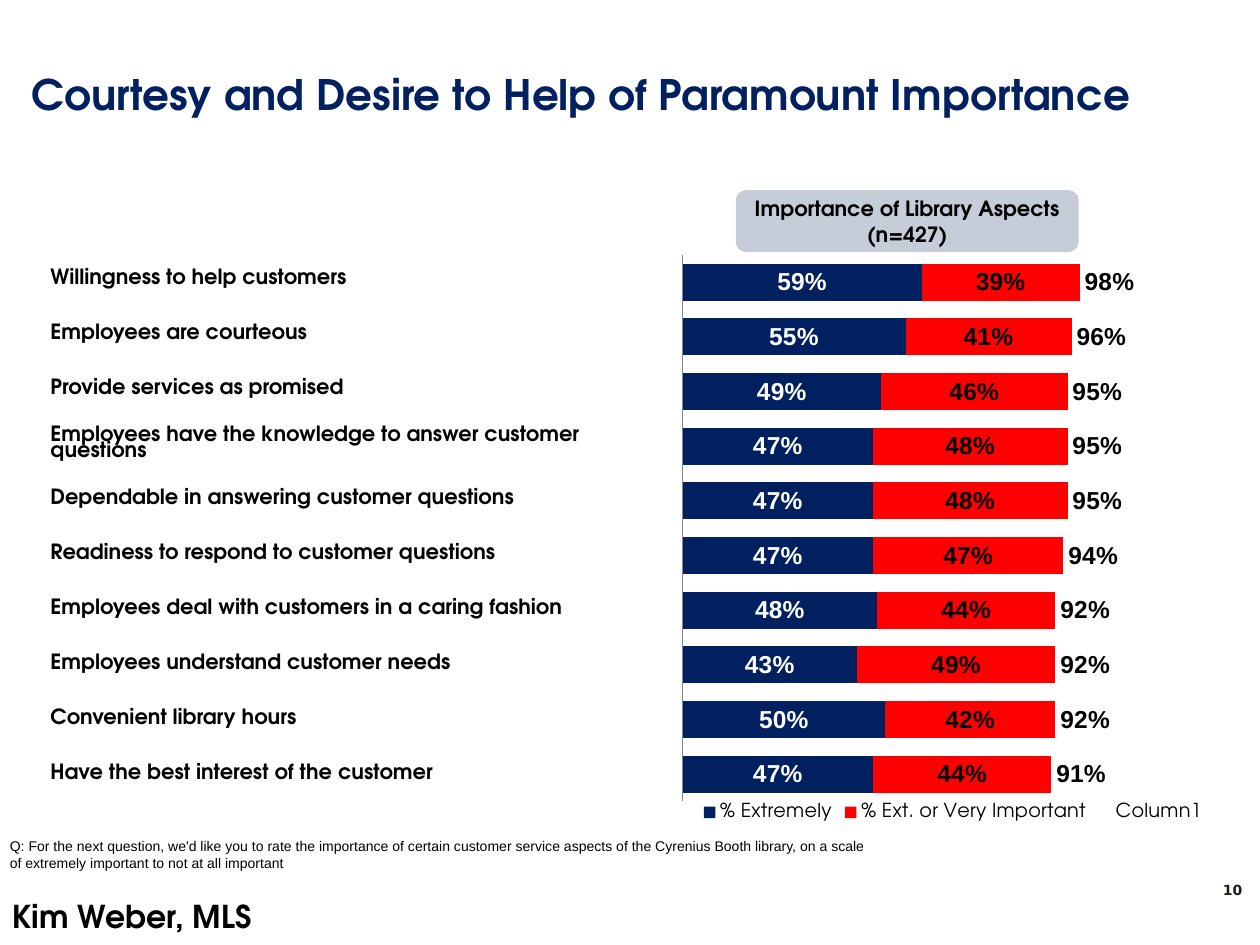
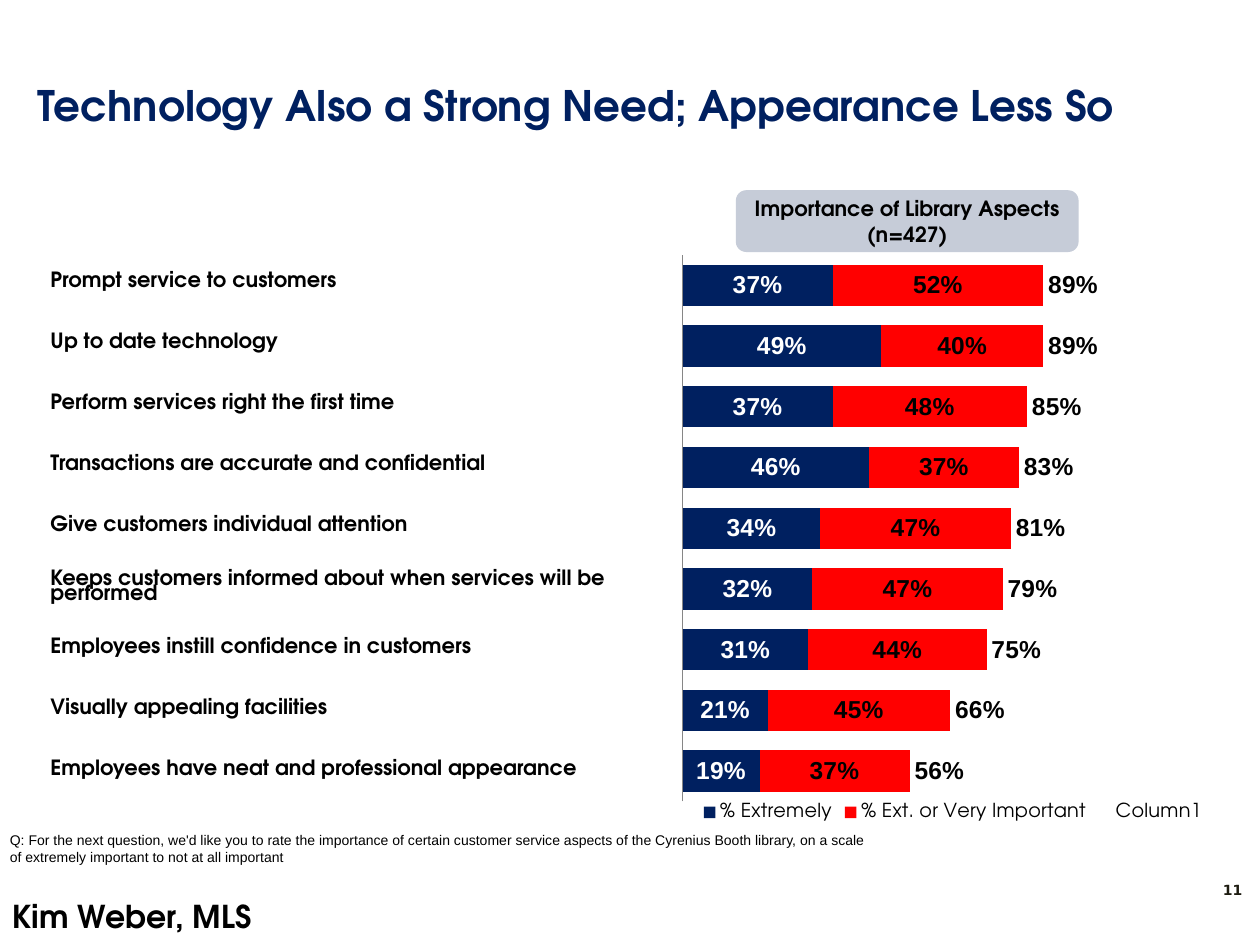
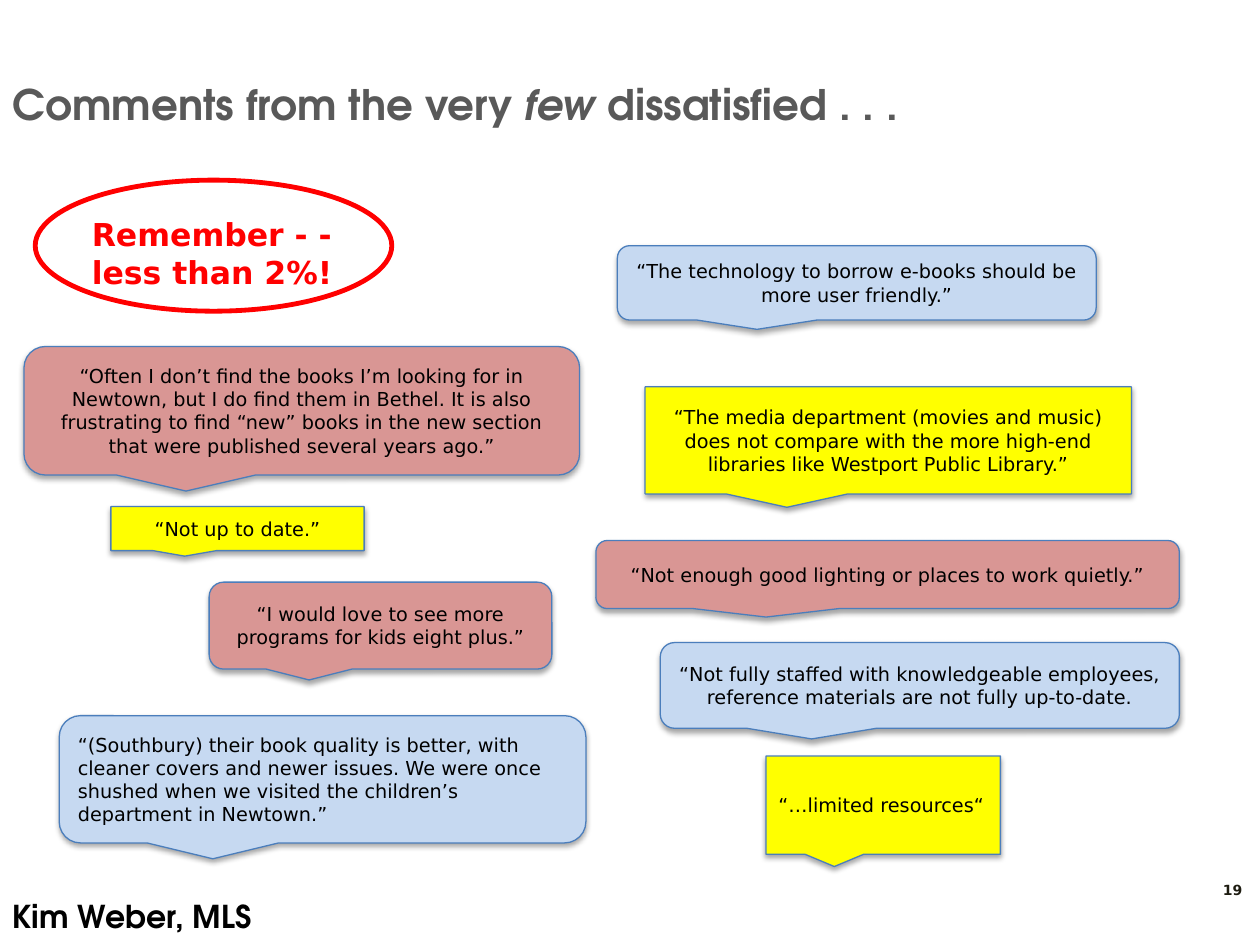
"""Build three library survey slides: two importance charts and a page of comments."""
from lxml import etree
from pptx import Presentation
from pptx.chart.data import CategoryChartData
from pptx.dml.color import RGBColor
from pptx.enum.chart import XL_CHART_TYPE as ChartType
from pptx.enum.chart import XL_LABEL_POSITION as LabelPos
from pptx.enum.chart import XL_LEGEND_POSITION as LegendPos
from pptx.enum.chart import XL_TICK_LABEL_POSITION as TickLabelPos
from pptx.enum.chart import XL_TICK_MARK as TickMark
from pptx.enum.shapes import MSO_SHAPE as Shape
from pptx.enum.text import MSO_ANCHOR as Anchor
from pptx.enum.text import MSO_AUTO_SIZE as AutoSize
from pptx.enum.text import PP_ALIGN as Align
from pptx.oxml import parse_xml
from pptx.oxml.ns import nsdecls, qn
from pptx.util import Inches, Pt

NAVY = RGBColor(0x00, 0x20, 0x60)
RED = RGBColor(0xFF, 0x00, 0x00)
BLACK = RGBColor(0x00, 0x00, 0x00)
WHITE = RGBColor(0xFF, 0xFF, 0xFF)
GRAY = RGBColor(0x59, 0x59, 0x59)
AXIS_GRAY = RGBColor(0x86, 0x86, 0x86)
PAGE_INK = RGBColor(0x1E, 0x1C, 0x11)
BANNER = RGBColor(0xC6, 0xCC, 0xD8)
YELLOW = RGBColor(0xFF, 0xFF, 0x00)
ROSE = RGBColor(0xD9, 0x96, 0x94)
SKY = RGBColor(0xC6, 0xD9, 0xF1)
OUTLINE = RGBColor(0x4B, 0x7E, 0xBC)

HEADING_FONT = "TeX Gyre Adventor"
BODY_FONT = "DejaVu Sans"
CHART_FONT = "Arial"

AUTHOR = "Kim Weber, MLS"
QUESTION = ("Q: For the next question, we'd like you to rate the importance of certain "
            "customer service aspects of the Cyrenius Booth library, on a scale of "
            "extremely important to not at all important")
SHADOW = (f'<a:effectLst {nsdecls("a")}><a:outerShdw blurRad="39370" dist="22860" '
          'dir="5400000" rotWithShape="0"><a:srgbClr val="000000">'
          '<a:alpha val="35000"/></a:srgbClr></a:outerShdw></a:effectLst>')

COURTESY_RATINGS = [
    ("Willingness to help customers", 59, 39, 98),
    ("Employees are courteous", 55, 41, 96),
    ("Provide services as promised", 49, 46, 95),
    ("Employees have the knowledge to answer customer questions", 47, 48, 95),
    ("Dependable in answering customer questions", 47, 48, 95),
    ("Readiness to respond to customer questions", 47, 47, 94),
    ("Employees deal with customers in a caring fashion", 48, 44, 92),
    ("Employees understand customer needs", 43, 49, 92),
    ("Convenient library hours", 50, 42, 92),
    ("Have the best interest of the customer", 47, 44, 91),
]
TECHNOLOGY_RATINGS = [
    ("Prompt service to customers", 37, 52, 89),
    ("Up to date technology", 49, 40, 89),
    ("Perform services right the first time", 37, 48, 85),
    ("Transactions are accurate and confidential", 46, 37, 83),
    ("Give customers individual attention", 34, 47, 81),
    ("Keeps customers informed about when services will be performed", 32, 47, 79),
    ("Employees instill confidence in customers", 31, 44, 75),
    ("Visually appealing facilities", 21, 45, 66),
    ("Employees have neat and professional appearance", 19, 37, 56),
]
COMMENTS = [
    ((6.08, 6, 1.86, 0.78), YELLOW, Align.LEFT, "“…limited resources“"),
    ((0.19, 2.75, 4.41, 1.02), ROSE, Align.CENTER,
     "“Often I don’t find the books I’m looking for in Newtown, but I do find them in "
     "Bethel. It is also frustrating to find “new” books in the new section that were "
     "published several years ago.”"),
    ((5.24, 5.1, 4.12, 0.68), SKY, Align.CENTER,
     "“Not fully staffed with knowledgeable employees, reference materials are not fully "
     "up-to-date."),
    ((0.47, 5.68, 4.18, 1.01), SKY, Align.LEFT,
     "“(Southbury) their book quality is better, with cleaner covers and newer issues. We "
     "were once shushed when we visited the children’s department in Newtown.”"),
    ((1.66, 4.62, 2.72, 0.69), ROSE, Align.CENTER,
     "“I would love to see more programs for kids eight plus.”"),
    ((5.12, 3.07, 3.86, 0.85), YELLOW, Align.CENTER,
     "“The media department (movies and music) does not compare with the more high-end "
     "libraries like Westport Public Library.”"),
    ((4.9, 1.95, 3.8, 0.59), SKY, Align.CENTER,
     "“The technology to borrow e-books should be more user friendly.”"),
    ((0.88, 4.02, 2.01, 0.35), YELLOW, Align.CENTER, "“Not up to date.”"),
    ((4.73, 4.29, 4.63, 0.54), ROSE, Align.CENTER,
     "“Not enough good lighting or places to work quietly.”"),
]


def write(frame, text, size=12, font=HEADING_FONT, color=BLACK, bold=False,
          align=Align.LEFT, spacing=None):
    """Fill a text frame, one paragraph a line, with *starred* words in italics."""
    for index, line in enumerate(text.split("\n")):
        paragraph = frame.add_paragraph() if index else frame.paragraphs[0]
        paragraph.alignment = align
        if spacing:
            paragraph.line_spacing = spacing
        for position, part in enumerate(line.split("*")):
            run = paragraph.add_run()
            run.text = part
            run.font.size = Pt(size)
            run.font.name = font
            run.font.color.rgb = color
            run.font.bold = bold
            run.font.italic = position % 2 == 1


def place_manually(parent, index, target="", **fractions):
    """Give a chart part a fixed layout in fractions of the chart area."""
    for old in parent.findall(qn("c:layout")):
        parent.remove(old)
    layout = etree.Element(qn("c:layout"))
    manual = etree.SubElement(layout, qn("c:manualLayout"))
    settings = {"layoutTarget": target} if target else {}
    settings.update(xMode="edge", yMode="edge", **fractions)
    for name, value in settings.items():
        etree.SubElement(manual, qn(f"c:{name}")).set("val", str(value))
    parent.insert(index, layout)


class Deck:
    """Hold the shared style and the slide being built."""

    def __init__(self):
        self.prs = Presentation()
        self.prs.slide_width = Inches(10)
        self.prs.slide_height = Inches(7.5)
        self.slide = None

    def start(self, title, box, number, color=NAVY):
        """Add a slide with its title, author and page number."""
        self.slide = self.prs.slides.add_slide(self.prs.slide_layouts[5])
        heading = self.slide.shapes.title
        heading.left, heading.top, heading.width, heading.height = map(Inches, box)
        frame = heading.text_frame
        frame.auto_size = AutoSize.NONE
        frame.vertical_anchor = Anchor.MIDDLE
        write(frame, title, size=24, color=color, bold=True)
        self.text((9.32, 6.95, 0.64, 0.24), str(number), size=8, font=BODY_FONT,
                  color=PAGE_INK, bold=True, align=Align.RIGHT)
        self.text((0, 7.07, 2.13, 0.4), AUTHOR, wrap=False, size=18, bold=True)

    def text(self, box, text, wrap=True, **style):
        """Add a text box that grows with its text."""
        frame = self.slide.shapes.add_textbox(*map(Inches, box)).text_frame
        frame.word_wrap = wrap
        frame.auto_size = AutoSize.SHAPE_TO_FIT_TEXT
        write(frame, text, **style)

    def shape(self, kind, box, fill=None, line=None, weight=0.75, text="", **style):
        """Add a preset shape with optional fill, outline and text."""
        shape = self.slide.shapes.add_shape(kind, *map(Inches, box))
        shape.shadow.inherit = False
        if fill is None:
            shape.fill.background()
        else:
            shape.fill.solid()
            shape.fill.fore_color.rgb = fill
        if line is None:
            shape.line.fill.background()
        else:
            shape.line.color.rgb = line
            shape.line.width = Pt(weight)
        if text:
            shape.text_frame.vertical_anchor = Anchor.MIDDLE
            write(shape.text_frame, text, **style)
        return shape

    def callout(self, box, fill, align, text):
        """Add a shadowed speech callout, square-cornered when yellow."""
        kind = (Shape.RECTANGULAR_CALLOUT if fill == YELLOW
                else Shape.ROUNDED_RECTANGULAR_CALLOUT)
        bubble = self.shape(kind, box, fill, OUTLINE, text=text, size=11,
                            font=BODY_FONT, align=align)
        properties = bubble.element.spPr
        properties.replace(properties.find(qn("a:effectLst")), parse_xml(SHADOW))

    def aspects(self, names):
        """Add the one-column table of aspect names."""
        box = map(Inches, (0.39, 2, 4.85, 4.36))
        table = self.slide.shapes.add_table(len(names), 1, *box).table
        table.first_row = table.horz_banding = False
        for row, name in zip(table.rows, names):
            row.height = Inches(4.36 / len(names))
            cell = row.cells[0]
            cell.fill.background()
            cell.vertical_anchor = Anchor.MIDDLE
            cell.margin_left = cell.margin_right = cell.margin_top = Inches(0.01)
            cell.margin_bottom = 0
            write(cell.text_frame, name, bold=True, spacing=0.8)

    def ratings(self, extremely, very, total):
        """Add the stacked bars with totals at the bar ends."""
        data = CategoryChartData()
        data.categories = [str(n + 1) for n in range(len(total))]
        data.add_series("% Extremely", extremely)
        data.add_series("% Ext. or Very Important", very)
        data.add_series("Column1", total)
        box = map(Inches, (4.5, 1.7, 6.47, 5.39))
        chart = self.slide.shapes.add_chart(ChartType.BAR_STACKED, *box, data).chart
        chart.has_title = False
        chart.font.size = Pt(20)
        chart.font.name = HEADING_FONT
        chart.font.color.rgb = BLACK

        aspect_axis, percent_axis = chart.category_axis, chart.value_axis
        aspect_axis.reverse_order = True
        aspect_axis.tick_label_position = TickLabelPos.NONE
        aspect_axis.major_tick_mark = aspect_axis.minor_tick_mark = TickMark.NONE
        aspect_axis.format.line.color.rgb = AXIS_GRAY
        percent_axis.minimum_scale, percent_axis.maximum_scale = 0, 100
        percent_axis.has_major_gridlines = False
        percent_axis.visible = False

        chart.has_legend = True
        chart.legend.position = LegendPos.BOTTOM
        chart.legend.include_in_layout = False
        chart.legend.font.size = Pt(11)
        chart.legend.font.name = HEADING_FONT

        plot = chart.plots[0]
        plot.gap_width, plot.overlap = 47, 100
        plot.vary_by_categories = False
        looks = [(NAVY, WHITE), (RED, BLACK), (None, BLACK)]
        for series, (fill, ink) in zip(plot.series, looks):
            labels = series.data_labels
            labels.show_value = True
            labels.number_format = "General\\%"
            labels.number_format_is_linked = False
            labels.font.size = Pt(14)
            labels.font.name = CHART_FONT
            labels.font.bold = True
            labels.font.color.rgb = ink
            if fill is None:
                series.format.fill.background()
                labels.position = LabelPos.INSIDE_BASE
            else:
                series.format.fill.solid()
                series.format.fill.fore_color.rgb = fill

        body = chart.element.find(qn("c:chart"))
        place_manually(body.find(qn("c:plotArea")), 0, "inner",
                       x=0.142, y=0.06, w=0.497, h=0.805)
        place_manually(body.find(qn("c:legend")), 1, x=0.16, y=0.86)

    def importance(self, title, box, number, rows, question_top):
        """Build a whole slide of importance ratings."""
        self.start(title, box, number)
        names, *scores = zip(*rows)
        self.ratings(*scores)
        self.aspects(names)
        self.text((-0.02, question_top, 7.1, 0.5), QUESTION, size=8, font=CHART_FONT)
        self.shape(Shape.ROUNDED_RECTANGLE, (5.84, 1.51, 2.72, 0.49), BANNER,
                   text="Importance of Library Aspects\n(n=427)", bold=True,
                   align=Align.CENTER)


def main():
    """Build and save the slides."""
    deck = Deck()
    deck.importance("Courtesy and Desire to Help of Paramount Importance",
                    (0.15, 0.39, 9, 0.7), 10, COURTESY_RATINGS, 6.6)
    deck.importance("Technology Also a Strong Need; Appearance Less So",
                    (0.2, 0.48, 9, 0.7), 11, TECHNOLOGY_RATINGS, 6.55)
    deck.start("Comments from the very *few* dissatisfied . . .",
               (0, 0.32, 9.7, 1), 19, color=GRAY)
    for comment in COMMENTS:
        deck.callout(*comment)
    deck.text((0.63, 1.66, 2.15, 0.71), "Remember - -\nless than 2%!", wrap=False,
              size=18, font=BODY_FONT, color=RED, bold=True)
    deck.shape(Shape.OVAL, (0.28, 1.43, 2.83, 1.04), line=RED, weight=2.75)
    deck.prs.save("out.pptx")


if __name__ == "__main__":
    main()
